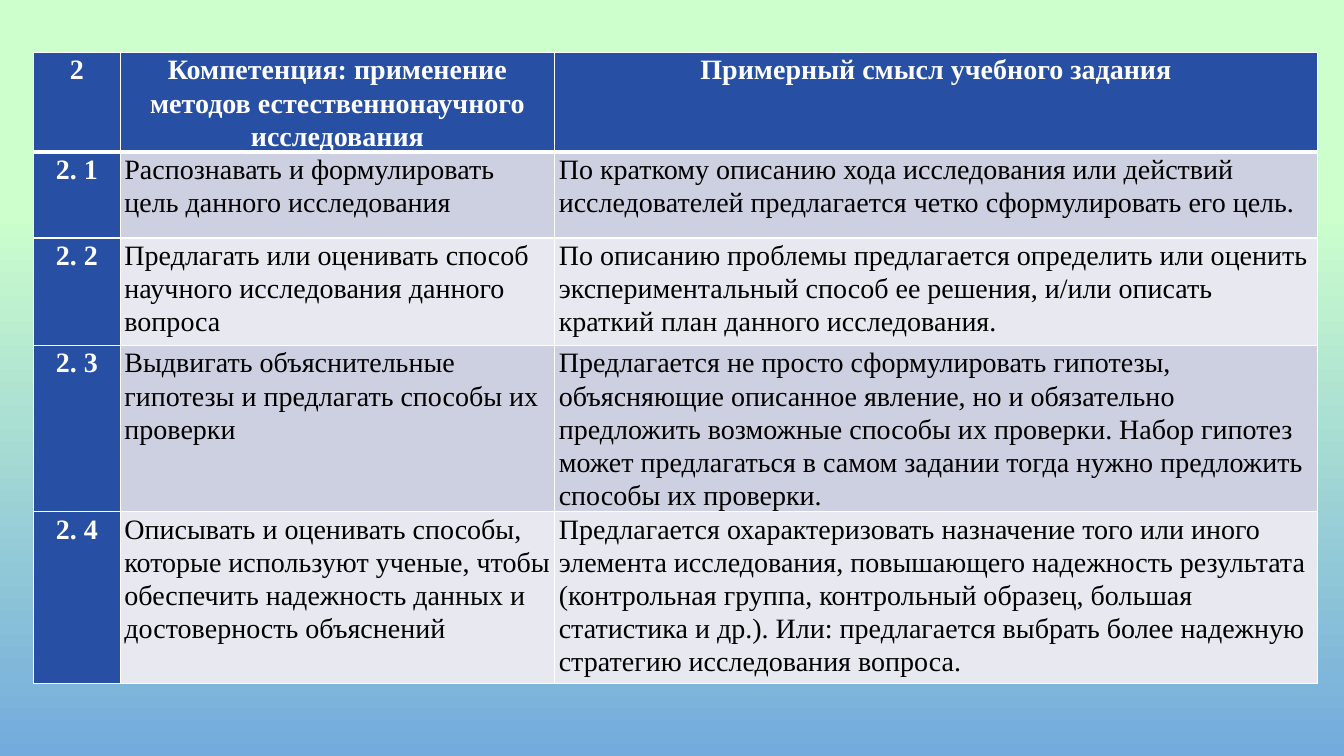
from dataclasses import dataclass

from lxml import etree
from pptx import Presentation
from pptx.dml.color import RGBColor
from pptx.enum.text import PP_ALIGN
from pptx.oxml.ns import qn
from pptx.util import Pt

CENTER, LEFT = PP_ALIGN.CENTER, PP_ALIGN.LEFT


@dataclass(frozen=True)
class Theme:
    """Colours, font and sizes of the slide."""
    font: str = "Times New Roman"
    text_size: float = 20
    line_spacing: float = 1.07
    header_fill: str = "274FA4"
    band_fills: tuple = ("CDD0E0", "E8E9F0")
    header_text: str = "FFFFFF"
    body_text: str = "000000"
    border: str = "FFFFFF"
    thin: float = 1
    thick: float = 3
    background: tuple = ((0.28, "CCFFCC"), (1, "73ABDD"))


ROWS = [
    ("2", "Компетенция: применение методов естественнонаучного исследования",
     "Примерный смысл учебного задания"),
    ("2. 1", "Распознавать и формулировать цель данного исследования",
     "По краткому описанию хода исследования или действий исследователей "
     "предлагается четко сформулировать его цель."),
    ("2. 2", "Предлагать или оценивать способ научного исследования данного вопроса",
     "По описанию проблемы предлагается определить или оценить экспериментальный "
     "способ ее решения, и/или описать краткий план данного исследования."),
    ("2. 3", "Выдвигать объяснительные гипотезы и предлагать способы их проверки",
     "Предлагается не просто сформулировать гипотезы, объясняющие описанное явление, "
     "но и обязательно предложить возможные способы их проверки. Набор гипотез может "
     "предлагаться в самом задании тогда нужно предложить способы их проверки."),
    ("2. 4", "Описывать и оценивать способы, которые используют ученые, чтобы "
     "обеспечить надежность данных и достоверность объяснений",
     "Предлагается охарактеризовать назначение того или иного элемента исследования, "
     "повышающего надежность результата (контрольная группа, контрольный образец, "
     "большая статистика и др.). Или: предлагается выбрать более надежную стратегию "
     "исследования вопроса."),
]
COLUMN_WIDTHS = (61.9, 310.3, 545)
ROW_HEIGHTS = (71, 61.2, 77, 118.6, 122.4)


def apply_format(target, values):
    """Set every attribute of the target from a dict."""
    for name, value in values.items():
        setattr(target, name, value)


class SlideBuilder:
    """Holds the theme and the current slide."""

    def __init__(self, slide, theme):
        """Keep the slide and its theme."""
        self.slide = slide
        self.theme = theme

    def background(self, angle):
        """Fill the slide background with the theme gradient."""
        fill = self.slide.background.fill
        fill.gradient()
        fill.gradient_angle = angle
        for stop, (position, color) in zip(fill.gradient_stops, self.theme.background):
            stop.position = position
            stop.color.rgb = RGBColor.from_string(color)

    def table(self, left, top, widths, heights, rows):
        """Add a table with a header row and a header column."""
        frame = self.slide.shapes.add_table(
            len(heights), len(widths), Pt(left), Pt(top), Pt(sum(widths)), Pt(sum(heights)))
        table = frame.table
        apply_format(table, {"first_row": False, "horz_banding": False})
        for column, width in zip(table.columns, widths):
            column.width = Pt(width)
        for row, height in zip(table.rows, heights):
            row.height = Pt(height)
        for row_index, texts in enumerate(rows):
            for column_index, text in enumerate(texts):
                self.cell(table.cell(row_index, column_index), text, row_index, column_index)

    def cell(self, cell, text, row_index, column_index):
        """Write and style one table cell."""
        theme = self.theme
        is_header = row_index == 0 or column_index == 0
        apply_format(cell, {"text": text, "margin_left": Pt(3), "margin_right": Pt(3),
                            "margin_top": 0, "margin_bottom": 0})
        paragraph = cell.text_frame.paragraphs[0]
        apply_format(paragraph, {"alignment": CENTER if is_header else LEFT,
                                 "line_spacing": theme.line_spacing})
        font = paragraph.runs[0].font
        apply_format(font, {"name": theme.font, "size": Pt(theme.text_size), "bold": is_header})
        font.color.rgb = RGBColor.from_string(theme.header_text if is_header else theme.body_text)
        self.borders(cell, {"lnL": theme.thin, "lnR": theme.thin,
                            "lnT": theme.thick if row_index == 1 else theme.thin,
                            "lnB": theme.thick if row_index == 0 else theme.thin})
        cell.fill.solid()
        band = theme.band_fills[(row_index - 1) % 2]
        cell.fill.fore_color.rgb = RGBColor.from_string(theme.header_fill if is_header else band)

    def borders(self, cell, widths):
        """Draw the cell borders, one width for each side."""
        properties = cell._tc.get_or_add_tcPr()
        for side, width in widths.items():
            line = etree.SubElement(properties, qn(f"a:{side}"), w=str(int(Pt(width))))
            fill = etree.SubElement(line, qn("a:solidFill"))
            etree.SubElement(fill, qn("a:srgbClr"), val=self.theme.border)


def main():
    """Build the slide and save it."""
    presentation = Presentation()
    apply_format(presentation, {"slide_width": Pt(960), "slide_height": Pt(540)})
    slide = presentation.slides.add_slide(presentation.slide_layouts[6])
    builder = SlideBuilder(slide, Theme())
    builder.background(270)
    builder.table(24, 37.6, COLUMN_WIDTHS, ROW_HEIGHTS, ROWS)
    presentation.save("out.pptx")


if __name__ == "__main__":
    main()
